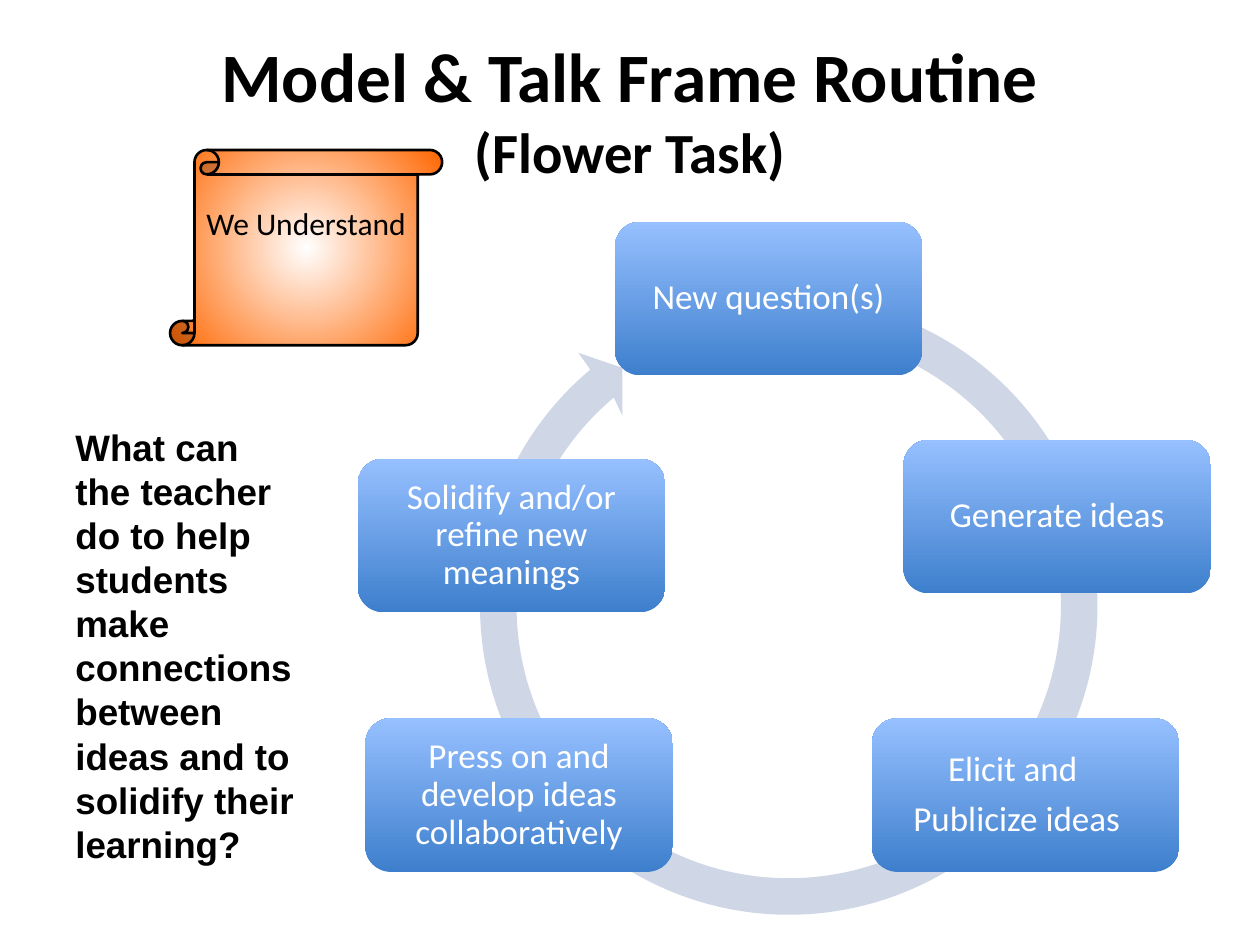
from math import cos, radians, sin, tan

from lxml import etree
from pptx import Presentation
from pptx.dml.color import RGBColor
from pptx.enum.shapes import MSO_SHAPE as SHAPE
from pptx.enum.text import MSO_ANCHOR as ANCHOR, PP_ALIGN as ALIGN
from pptx.oxml.ns import qn
from pptx.util import Inches, Pt

COLORS = {
    "ring": "CFD7E7",
    "node_bottom": "3E7FCD",
    "node_top": "96C0FF",
    "scroll": "FF6600",
    "white": "FFFFFF",
    "black": "000000",
}
NODE_W, NODE_H = 2.44, 1.22
NODES = [
    (2.84, 3.64, ["Solidify and/or refine new meanings"], {}),
    (4.88, 1.76, ["New question(s)"], {}),
    (7.17, 3.49, ["Generate ideas"], {}),
    (6.92, 5.7, ["Elicit and ", "Publicize ideas"],
     {"insets": (0.01, 0.08, 0.15, 0.08)}),
    (2.9, 5.7, ["Press on and develop ideas collaboratively"], {}),
]
QUESTION = ("What can the teacher do to help students make connections "
            "between ideas and to solidify their learning?")


def rgb(name):
    return RGBColor.from_string(COLORS[name])


def write(sp, lines, sizes, color="black", font="Calibri", bold=False,
          align=ALIGN.CENTER, anchor=ANCHOR.MIDDLE, spacing=1.0, gap=0,
          insets=(0.1, 0.05, 0.1, 0.05)):
    tf = sp.text_frame
    tf.word_wrap = True
    tf.vertical_anchor = anchor
    tf.margin_left, tf.margin_top, tf.margin_right, tf.margin_bottom = map(
        Inches, insets)
    for i, (line, size) in enumerate(zip(lines, sizes)):
        p = tf.add_paragraph() if i else tf.paragraphs[0]
        p.alignment = align
        p.line_spacing = spacing
        p.space_before = Pt(gap if i else 0)
        r = p.add_run()
        r.text = line
        r.font.name = font
        r.font.size = Pt(size)
        r.font.bold = bold
        r.font.color.rgb = rgb(color)


def fill_gradient(sp, first, last):
    sp.fill.gradient()
    for stop, name in zip(sp.fill.gradient_stops, (first, last)):
        stop.color.rgb = rgb(name)


def add_textbox(s, x, y, w, h, lines, sizes, **fmt):
    sp = s.shapes.add_textbox(Inches(x), Inches(y), Inches(w), Inches(h))
    write(sp, lines, sizes, **fmt)


def on_circle(center, radius, angle):
    a = radians(angle)
    return center + radius * cos(a), center + radius * sin(a)


def arc_curves(center, radius, start, step, count):
    pull = 4 / 3 * tan(radians(step) / 4) * radius
    curves = []
    for i in range(count):
        a, b = start + i * step, start + (i + 1) * step
        (x1, y1), (x2, y2) = (on_circle(center, radius, t) for t in (a, b))
        a, b = radians(a), radians(b)
        curves.append([(x1 - pull * sin(a), y1 + pull * cos(a)),
                       (x2 + pull * sin(b), y2 - pull * cos(b)),
                       (x2, y2)])
    return curves


def add_cycle_arrow(s, x, y, size):
    center, outer, inner = size / 2, 2.45, 2.16
    head = [(0.94, 0.6), (1.29, 0.72), (1.29, 1.1),
            on_circle(center, inner, 230)]
    segments = ([[on_circle(center, outer, -70)]]
                + arc_curves(center, outer, -70, 60, 5)
                + [[point] for point in head]
                + arc_curves(center, inner, 230, -60, 5))
    ends = [tuple(map(Inches, segment[-1])) for segment in segments]
    builder = s.shapes.build_freeform(*ends[0])
    builder.add_line_segments(ends[1:], close=True)
    sp = builder.convert_to_shape()
    sp.left, sp.top = Inches(x), Inches(y)
    sp.width = sp.height = Inches(size)
    outline = next(sp._element.iter(qn("a:path")))
    for side in "wh":
        outline.set(side, str(Inches(size)))
    for node, segment in zip(list(outline), segments):
        curve = len(segment) == 3
        new = etree.Element(qn("a:cubicBezTo") if curve else node.tag)
        for px, py in segment:
            etree.SubElement(new, qn("a:pt"), x=str(Inches(px)),
                             y=str(Inches(py)))
        outline.replace(node, new)
    sp.shadow.inherit = False
    sp.fill.solid()
    sp.fill.fore_color.rgb = rgb("ring")
    sp.line.fill.background()


def add_node(s, x, y, lines, insets=(0.08,) * 4):
    sp = s.shapes.add_shape(SHAPE.ROUNDED_RECTANGLE, Inches(x), Inches(y),
                            Inches(NODE_W), Inches(NODE_H))
    sp.shadow.inherit = False
    sp.adjustments[0] = 0.167
    fill_gradient(sp, "node_bottom", "node_top")
    sp.fill.gradient_angle = 90
    sp.line.fill.background()
    write(sp, lines, [20] * len(lines), color="white", spacing=0.9, gap=7,
          insets=insets)


def add_scroll(s, x, y, w, h, text):
    sp = s.shapes.add_shape(SHAPE.VERTICAL_SCROLL, Inches(x), Inches(y),
                            Inches(w), Inches(h))
    sp.shadow.inherit = False
    fill_gradient(sp, "white", "scroll")
    grad = sp._element.spPr.find(qn("a:gradFill"))
    radial = etree.Element(qn("a:path"), {"path": "circle"})
    etree.SubElement(radial, qn("a:fillToRect"),
                     dict.fromkeys("ltrb", "50000"))
    grad.replace(grad.find(qn("a:lin")), radial)
    sp.line.color.rgb = rgb("black")
    sp.line.width = Pt(1.5)
    write(sp, [text], [18], anchor=ANCHOR.TOP, spacing=1.15,
          insets=(0, 0.19, 0, 0))


def main():
    """Build the talk frame routine slide."""
    prs = Presentation()
    prs.slide_width, prs.slide_height = Inches(10), Inches(7.5)
    s = prs.slides.add_slide(prs.slide_layouts[6])
    add_cycle_arrow(s, 3.65, 2.2, 5.22)
    for x, y, lines, fmt in NODES:
        add_node(s, x, y, lines, **fmt)
    add_scroll(s, 1.35, 1.19, 2.16, 1.55, "We Understand")
    add_textbox(s, 0.5, 0.24, 9, 1.25,
                ["Model & Talk Frame Routine", "(Flower Task)"],
                [39.6, 32.4], bold=True)
    add_textbox(s, 0.5, 3.27, 1.97, 3.75, [QUESTION], [21], font="Arial",
                bold=True, align=ALIGN.LEFT, anchor=ANCHOR.TOP,
                insets=(0.1,) * 4)
    prs.save("out.pptx")


if __name__ == "__main__":
    main()
